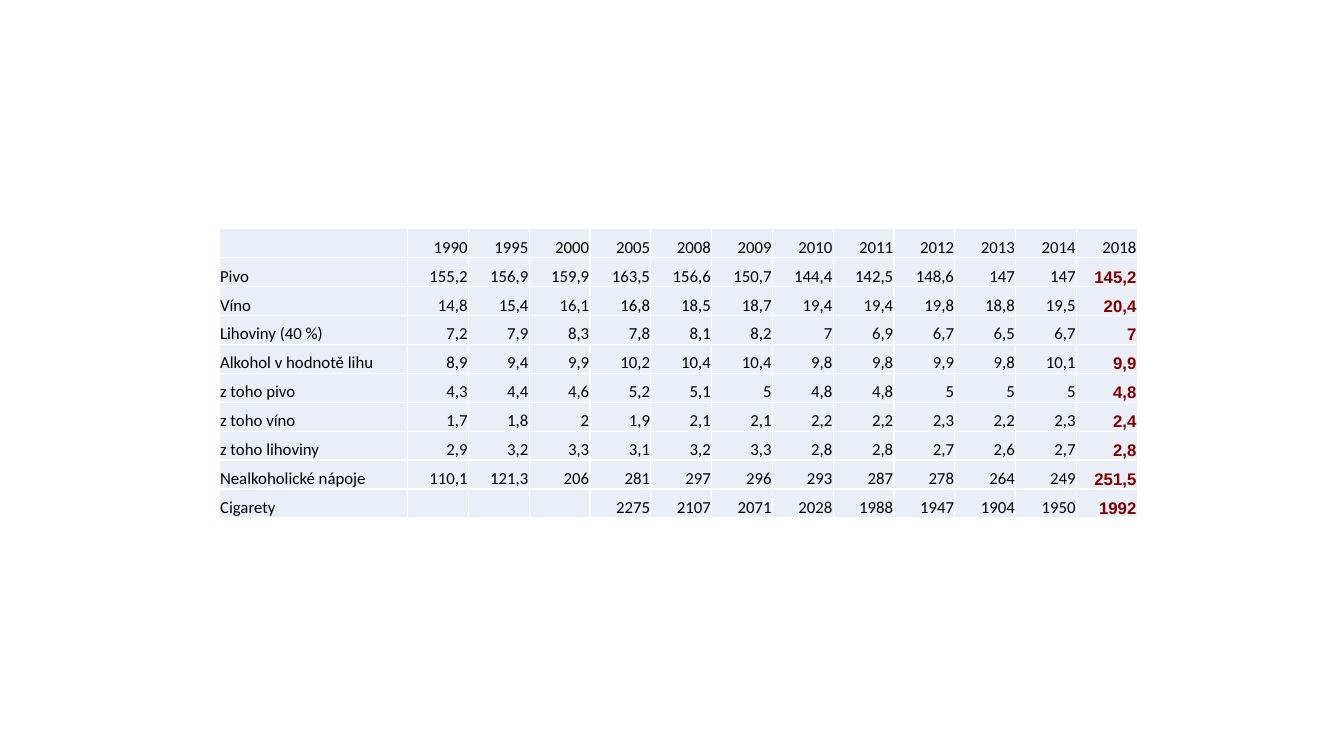
from lxml import etree
from pptx import Presentation
from pptx import util as u
from pptx.dml import color
from pptx.enum import text
from pptx.oxml import ns

COLORS = {"cell": "EAEFF7", "border": "FFFFFF", "body": "000000", "latest": "800000"}

BODY_FONT = {"name": "Calibri", "size": u.Pt(12), "bold": False}
LATEST_FONT = {"name": "Arial", "size": u.Pt(12), "bold": True}
CELL_FORMAT = {
    "margin_left": u.Pt(0.6),
    "margin_right": u.Pt(0.6),
    "margin_top": u.Pt(0.6),
    "margin_bottom": u.Pt(0),
    "vertical_anchor": text.MSO_ANCHOR.BOTTOM,
}

YEARS = "1990 1995 2000 2005 2008 2009 2010 2011 2012 2013 2014 2018".split()
CONSUMPTION = {
    "Pivo": "155,2 156,9 159,9 163,5 156,6 150,7 144,4 142,5 148,6 147 147 145,2",
    "Víno": "14,8 15,4 16,1 16,8 18,5 18,7 19,4 19,4 19,8 18,8 19,5 20,4",
    "Lihoviny (40 %)": "7,2 7,9 8,3 7,8 8,1 8,2 7 6,9 6,7 6,5 6,7 7",
    "Alkohol v hodnotě lihu": "8,9 9,4 9,9 10,2 10,4 10,4 9,8 9,8 9,9 9,8 10,1 9,9",
    "z toho pivo": "4,3 4,4 4,6 5,2 5,1 5 4,8 4,8 5 5 5 4,8",
    "z toho víno": "1,7 1,8 2 1,9 2,1 2,1 2,2 2,2 2,3 2,2 2,3 2,4",
    "z toho lihoviny": "2,9 3,2 3,3 3,1 3,2 3,3 2,8 2,8 2,7 2,6 2,7 2,8",
    "Nealkoholické nápoje": "110,1 121,3 206 281 297 296 293 287 278 264 249 251,5",
    "Cigarety": "2275 2107 2071 2028 1988 1947 1904 1950 1992",
}

LEFT, TOP = 156.6, 163.5
LABEL_WIDTH, YEAR_WIDTH, ROW_HEIGHT = 134.6, 43.44, 20.66


def apply_format(target, values):
    for name, value in values.items():
        setattr(target, name, value)


def add_borders(cell):
    properties = cell._tc.get_or_add_tcPr()
    for position, side in enumerate(("lnL", "lnR", "lnT", "lnB")):
        border = etree.Element(ns.qn(f"a:{side}"), w=str(u.Pt(1)))
        fill = etree.SubElement(border, ns.qn("a:solidFill"))
        etree.SubElement(fill, ns.qn("a:srgbClr"), val=COLORS["border"])
        properties.insert(position, border)


def write_cell(cell, wording, is_label, is_latest):
    apply_format(cell, CELL_FORMAT)
    cell.fill.solid()
    cell.fill.fore_color.rgb = color.RGBColor.from_string(COLORS["cell"])
    add_borders(cell)

    paragraph = cell.text_frame.paragraphs[0]
    paragraph.alignment = text.PP_ALIGN.LEFT if is_label else text.PP_ALIGN.RIGHT
    if not wording:
        # Keeps empty cells from stretching their row
        etree.SubElement(paragraph._p, ns.qn("a:endParaRPr"), sz="1200")
        return
    run = paragraph.add_run()
    run.text = wording
    apply_format(run.font, LATEST_FONT if is_latest else BODY_FONT)
    ink = COLORS["latest" if is_latest else "body"]
    run.font.color.rgb = color.RGBColor.from_string(ink)


def add_consumption_table(slide):
    # Series that start later are padded on the left
    rows = [["", *YEARS]]
    for label, series in CONSUMPTION.items():
        values = series.split()
        rows.append([label, *[""] * (len(YEARS) - len(values)), *values])

    widths = [LABEL_WIDTH] + [YEAR_WIDTH] * len(YEARS)
    table = slide.shapes.add_table(
        len(rows), len(widths), u.Pt(LEFT), u.Pt(TOP),
        u.Pt(sum(widths)), u.Pt(ROW_HEIGHT * len(rows))).table
    apply_format(table, {"first_row": False, "horz_banding": False})
    for column, width in zip(table.columns, widths):
        column.width = u.Pt(width)
    for row in table.rows:
        row.height = u.Pt(ROW_HEIGHT)

    for r, row in enumerate(rows):
        for c, wording in enumerate(row):
            is_latest = r > 0 and c == len(YEARS)
            write_cell(table.cell(r, c), wording, c == 0, is_latest)


def main():
    deck = Presentation()
    apply_format(deck, {"slide_width": u.Pt(960), "slide_height": u.Pt(540)})
    slide = deck.slides.add_slide(deck.slide_layouts[6])
    add_consumption_table(slide)
    deck.save("out.pptx")


if __name__ == "__main__":
    main()
